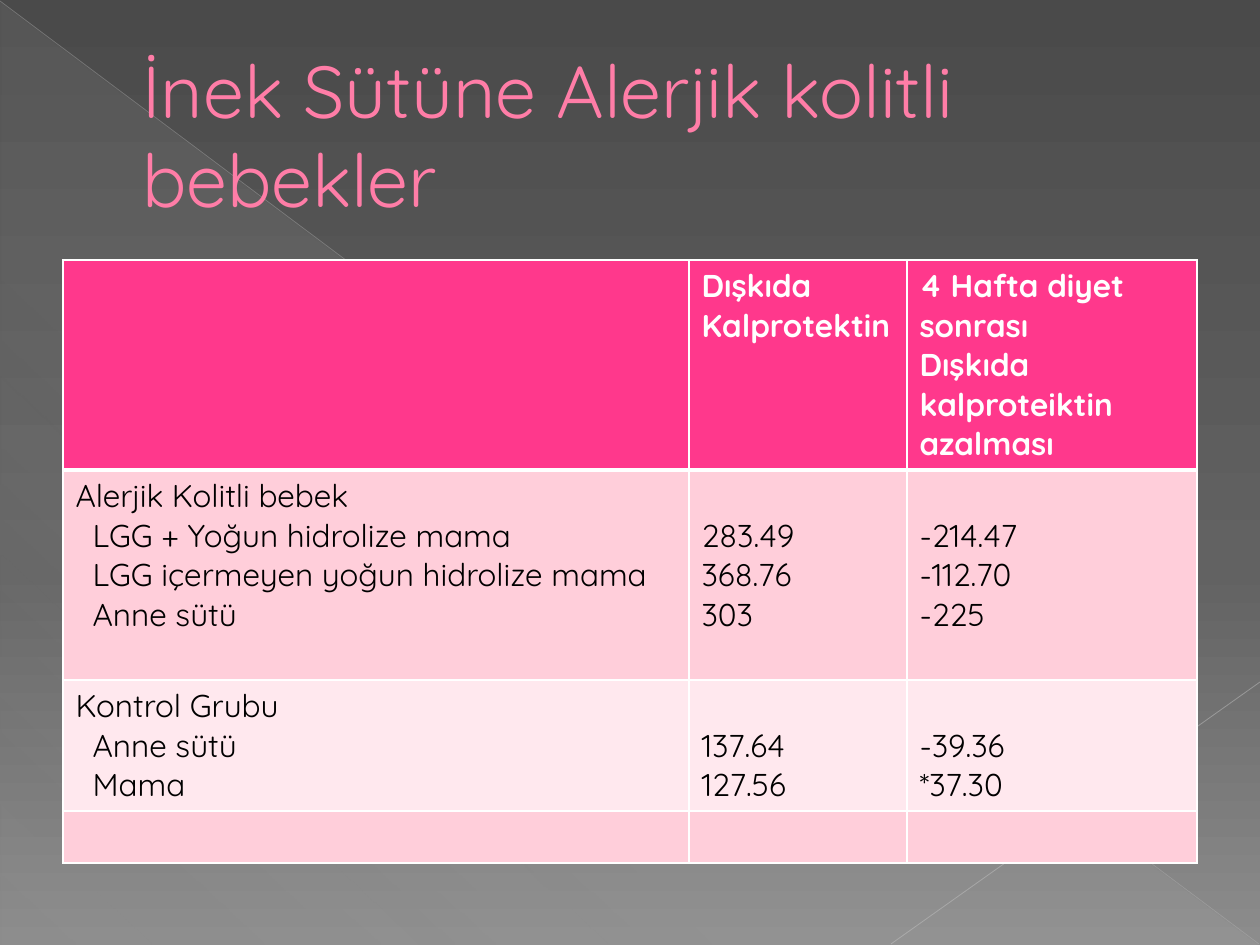
from dataclasses import dataclass

from lxml.etree import SubElement
from pptx import Presentation
from pptx.dml.color import RGBColor
from pptx.enum.shapes import MSO_CONNECTOR, MSO_SHAPE
from pptx.enum.text import MSO_ANCHOR
from pptx.oxml.ns import qn
from pptx.util import Pt

EMU_PER_PX = 914400 / 126


def px(length):
    return round(length * EMU_PER_PX)


@dataclass(frozen=True)
class Theme:
    font: str = "Quicksand"
    title_size: int = 42
    table_size: int = 18
    title: str = "FF7DA7"
    header: str = "FF388C"
    band_dark: str = "FFCEDA"
    band_light: str = "FFE8EE"
    white: str = "FFFFFF"
    black: str = "000000"
    background: tuple = ((0, "4A4A4A", 100), (60, "626262", 100), (100, "8C8C8C", 100))
    sheen: tuple = ((0, "D2D2D2", 10), (70, "D2D2D2", 8), (100, "D2D2D2", 1))
    long_ray: str = "BFBFBF"
    short_ray: str = "C6C6C6"


class SlideBuilder:
    """Draws themed elements on one slide, with lengths in px."""

    def __init__(self, slide, theme):
        self.slide = slide
        self.theme = theme

    def gradient(self, fill, element, stops, angle):
        fill.gradient()
        fill.gradient_angle = -angle % 360
        stop_list = element.find(".//" + qn("a:gsLst"))
        for stop in list(stop_list):
            stop_list.remove(stop)
        for position, color, opacity in stops:
            stop = SubElement(stop_list, qn("a:gs"), pos=str(position * 1000))
            color_element = SubElement(stop, qn("a:srgbClr"), val=color)
            SubElement(color_element, qn("a:alpha"), val=str(opacity * 1000))

    def background(self):
        self.gradient(self.slide.background.fill, self.slide.element, self.theme.background, 90)

    def triangle(self, left, top, width, height):
        shape = self.slide.shapes.add_shape(
            MSO_SHAPE.RIGHT_TRIANGLE, px(left), px(top), px(width), px(height))
        shape.shadow.inherit = False
        shape.line.fill.background()
        self.gradient(shape.fill, shape.element, self.theme.sheen, 133)

    def ray(self, start, end, color, width, opacity):
        connector = self.slide.shapes.add_connector(
            MSO_CONNECTOR.STRAIGHT, *map(px, (*start, *end)))
        connector.line.width = Pt(width)
        connector.line.color.rgb = RGBColor.from_string(color)
        color_element = connector.element.spPr.find(".//" + qn("a:srgbClr"))
        SubElement(color_element, qn("a:alpha"), val=str(opacity * 1000))
        SubElement(connector.element.spPr, qn("a:effectLst"))

    def fill_text(self, frame, lines, size, color, bold=False, indents=()):
        for index, line in enumerate(lines):
            paragraph = frame.paragraphs[0] if index == 0 else frame.add_paragraph()
            paragraph.text = line
            if index < len(indents):
                properties = paragraph._p.get_or_add_pPr()
                properties.set("marL", str(px(indents[index])))
                properties.set("indent", "0")
            font = paragraph.font
            font.name = self.theme.font
            font.size = Pt(size)
            font.bold = bold
            font.color.rgb = RGBColor.from_string(color)

    def title(self, text, left, top, width, height):
        frame = self.slide.shapes.add_textbox(px(left), px(top), px(width), px(height)).text_frame
        frame.word_wrap = True
        frame.vertical_anchor = MSO_ANCHOR.MIDDLE
        self.fill_text(frame, [text], self.theme.title_size, self.theme.title, indents=[67])

    def borders(self, cell, top_width, bottom_width):
        properties = cell._tc.get_or_add_tcPr()
        widths = {"lnL": 1, "lnR": 1, "lnT": top_width, "lnB": bottom_width}
        for side, width in widths.items():
            line = SubElement(properties, qn(f"a:{side}"), w=str(Pt(width)))
            fill = SubElement(line, qn("a:solidFill"))
            SubElement(fill, qn("a:srgbClr"), val=self.theme.white)

    def table(self, rows, left, top, column_widths, row_heights):
        theme = self.theme
        table = self.slide.shapes.add_table(
            len(rows), len(column_widths), px(left), px(top),
            px(sum(column_widths)), px(sum(row_heights))).table
        for column, width in zip(table.columns, column_widths):
            column.width = px(width)
        for row, height in zip(table.rows, row_heights):
            row.height = px(height)
        for row_index, row in enumerate(rows):
            is_header = row_index == 0
            band = theme.band_dark if row_index % 2 else theme.band_light
            for column_index, lines in enumerate(row):
                cell = table.cell(row_index, column_index)
                self.borders(cell, 3 if row_index == 1 else 1, 3 if is_header else 1)
                cell.fill.solid()
                cell.fill.fore_color.rgb = RGBColor.from_string(theme.header if is_header else band)
                is_label = column_index == 0 and not is_header
                if lines and not is_header and not is_label:
                    cell.margin_top = px(46)
                self.fill_text(cell.text_frame, lines or [""], theme.table_size,
                               theme.white if is_header else theme.black, is_header,
                               [0] + [17] * (len(lines) - 1) if is_label else ())


def main():
    presentation = Presentation()
    presentation.slide_width, presentation.slide_height = px(1260), px(945)
    theme = Theme()
    builder = SlideBuilder(presentation.slides.add_slide(presentation.slide_layouts[6]), theme)
    builder.background()
    builder.triangle(1, 2, 1258, 943)
    builder.ray((0, 1), (1259, 944), theme.long_ray, 0.39, 35)
    builder.ray((1260, 682), (891, 944), theme.short_ray, 0.47, 45)
    builder.title("İnek Sütüne Alerjik kolitli bebekler", 63, 37, 1134, 193)
    rows = [
        [[], ["Dışkıda Kalprotektin"],
         ["4 Hafta diyet sonrası", "Dışkıda kalproteiktin azalması"]],
        [["Alerjik Kolitli bebek", "LGG + Yoğun hidrolize mama",
          "LGG içermeyen yoğun hidrolize mama", "Anne sütü"],
         ["283.49", "368.76", "303"], ["-214.47", "-112.70", "-225"]],
        [["Kontrol Grubu", "Anne sütü", "Mama"],
         ["137.64", "127.56"], ["-39.36", "*37.30"]],
        [[], [], []],
    ]
    builder.table(rows, 63, 260, (626, 218, 290), (210, 210, 131, 52))
    presentation.save("out.pptx")


if __name__ == "__main__":
    main()
